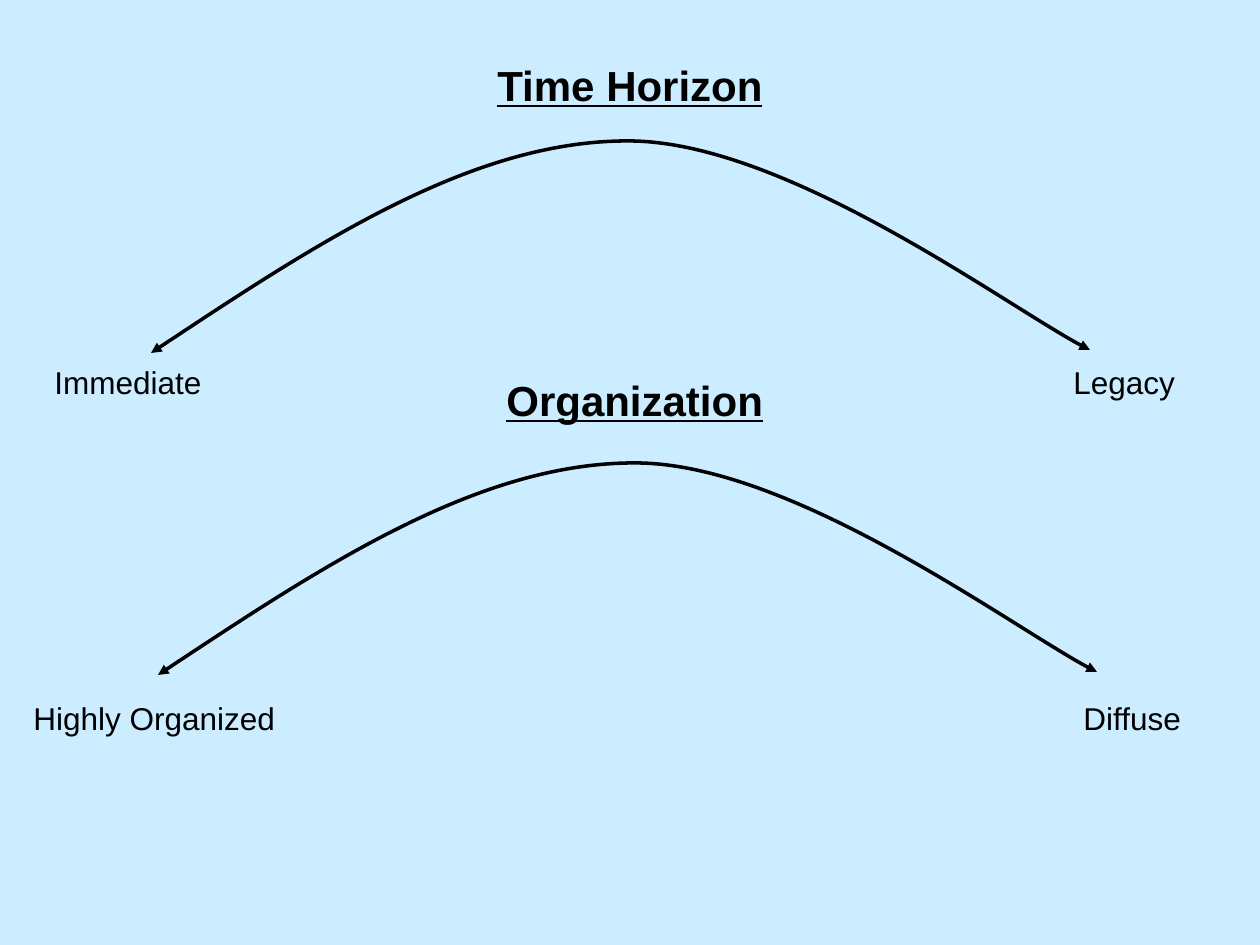
import pptx
import pptx.dml.color
import pptx.enum.text
import pptx.oxml
import pptx.oxml.ns
import pptx.util

PX = 914400 / 126
COLORS = {"background": "CCECFF", "ink": "000000"}
FONT = "Arial"
ARC_START = (0, 213)
ARC_CURVES = [
    [(160, 107), (320, 1), (476, 1)],
    [(633, 0), (870, 177), (939, 210)],
]
SPECTRA = [
    {
        "box": (0, 53, 1260, 315),
        "heading": ("Time Horizon", (63, 0, 1134, 791), "CENTER"),
        "arc": (151, 87),
        "ends": [("Immediate", (42, 304, 179, 50)), ("Legacy", (1061, 304, 136, 50))],
    },
    {
        "box": (0, 368, 1260, 375),
        "heading": ("Organization", (494, 0, 283, 63), "LEFT"),
        "arc": (158, 94),
        "ends": [("Highly Organized", (21, 325, 283, 50)), ("Diffuse", (1071, 325, 157, 50))],
    },
]


def emu(px):
    """Turn px into EMU."""
    return pptx.util.Emu(round(px * PX))


def rgb(name):
    """Look up a named colour."""
    return pptx.dml.color.RGBColor.from_string(COLORS[name])


def add_text(s, text, box, size, heading=False, align="LEFT"):
    """Add a text box with one paragraph."""
    tf = s.shapes.add_textbox(*map(emu, box)).text_frame
    tf.word_wrap = True
    tf.text = text
    p = tf.paragraphs[0]
    p.alignment = pptx.enum.text.PP_ALIGN[align]
    font = p.runs[0].font
    font.name = FONT
    font.size = pptx.util.Pt(size)
    font.color.rgb = rgb("ink")
    if heading:
        font.bold = True
        font.underline = True


def add_arc(s, left, top):
    """Draw a curved line with an arrowhead at both ends."""
    builder = s.shapes.build_freeform(*ARC_START, scale=PX)
    builder.add_line_segments([pt for curve in ARC_CURVES for pt in curve], close=False)
    sp = builder.convert_to_shape(emu(left), emu(top))
    sp.shadow.inherit = False
    sp.fill.background()
    sp.line.color.rgb = rgb("ink")
    sp.line.width = pptx.util.Pt(2)

    qn = pptx.oxml.ns.qn
    path = sp.element.find(".//" + qn("a:path"))
    segments = path.findall(qn("a:lnTo"))
    for i in range(0, len(segments), 3):
        curve = path.makeelement(qn("a:cubicBezTo"), {})
        segments[i].addprevious(curve)
        for segment in segments[i:i + 3]:
            curve.append(segment[0])
            path.remove(segment)

    ln = sp.element.spPr.find(qn("a:ln"))
    for tag in ("a:headEnd", "a:tailEnd"):
        ln.append(ln.makeelement(qn(tag), {"type": "triangle"}))


def add_spectrum(s, box, heading, arc, ends):
    """Place a heading, an arc and two end labels within a box."""
    left, top = box[:2]

    def place(part):
        """Shift a part into the box."""
        return (left + part[0], top + part[1], *part[2:])

    text, part, align = heading
    add_text(s, text, place(part), 24, heading=True, align=align)
    add_arc(s, *place(arc))
    for text, part in ends:
        add_text(s, text, place(part), 18)


def main():
    """Build and save the slide."""
    prs = pptx.Presentation()
    prs.slide_width, prs.slide_height = emu(1260), emu(945)
    s = prs.slides.add_slide(prs.slide_layouts[6])
    s.background.fill.solid()
    s.background.fill.fore_color.rgb = rgb("background")
    for spectrum in SPECTRA:
        add_spectrum(s, **spectrum)
    prs.save("out.pptx")


if __name__ == "__main__":
    main()
